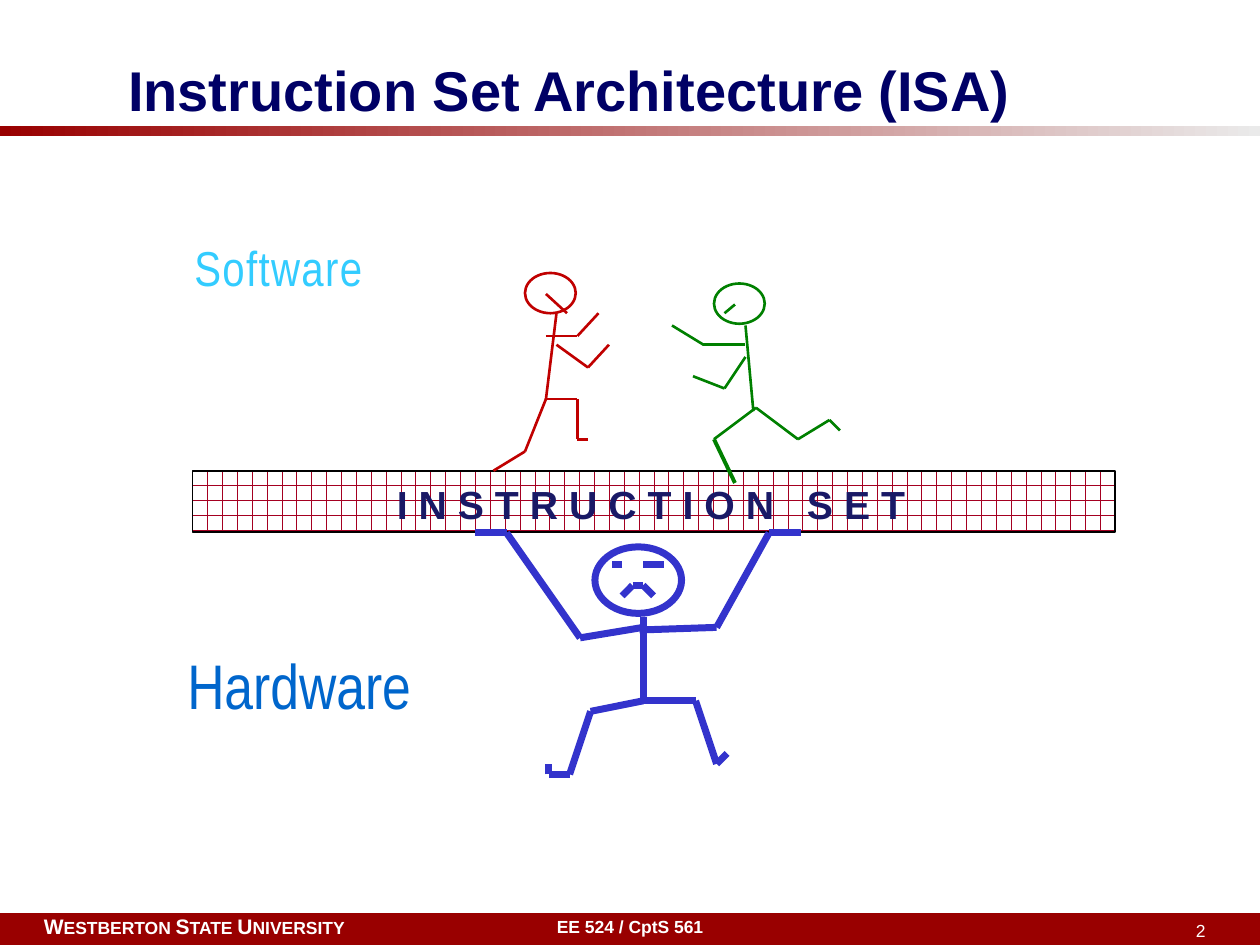
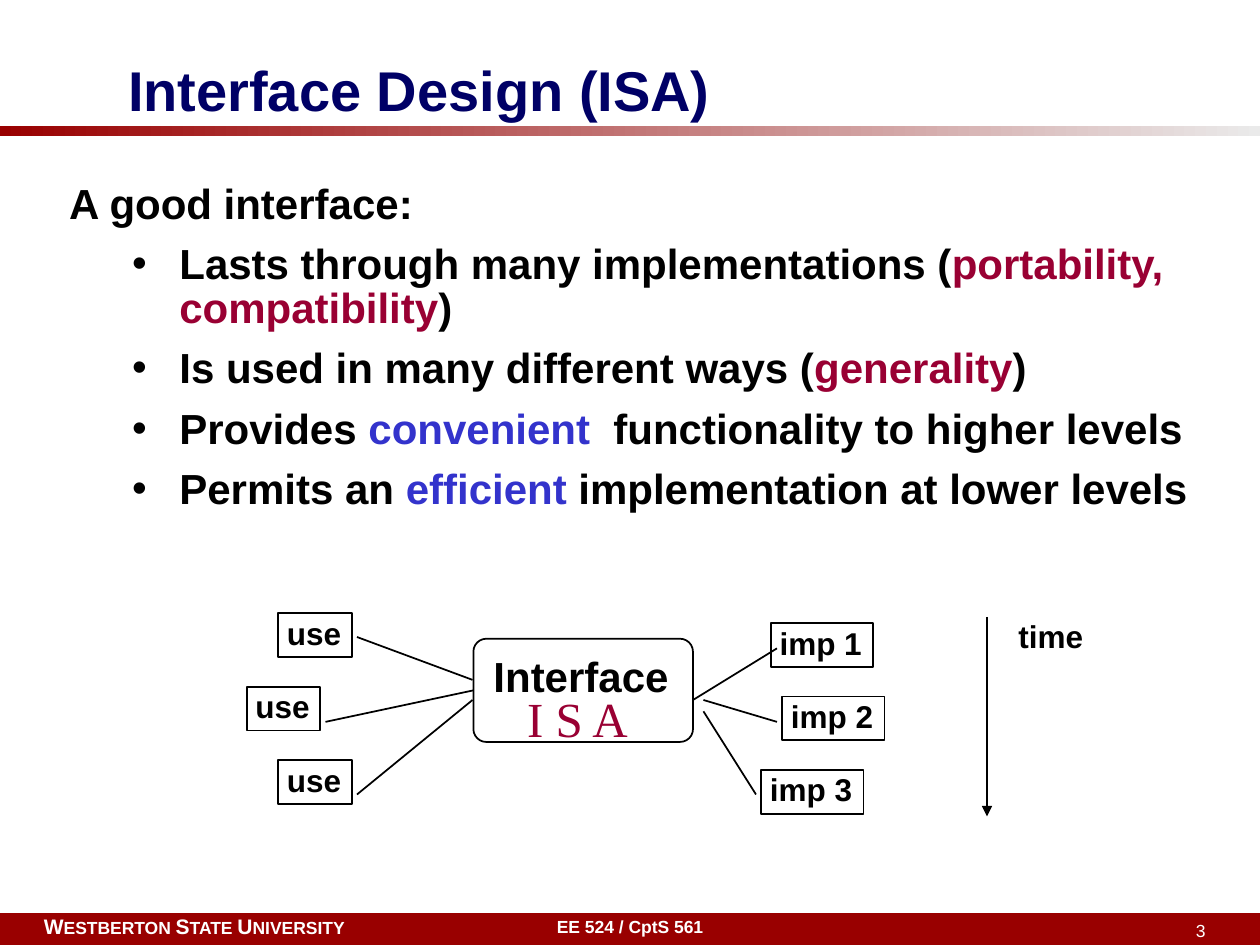
from lxml import etree
from pptx import Presentation
from pptx.dml.color import RGBColor
from pptx.enum.dml import MSO_PATTERN
from pptx.enum.shapes import MSO_CONNECTOR, MSO_SHAPE
from pptx.enum.text import MSO_ANCHOR, MSO_AUTO_SIZE, PP_ALIGN
from pptx.oxml.ns import qn
from pptx.util import Pt

STRAIGHT = MSO_CONNECTOR.STRAIGHT
RECTANGLE, ROUNDED, OVAL = MSO_SHAPE.RECTANGLE, MSO_SHAPE.ROUNDED_RECTANGLE, MSO_SHAPE.OVAL
LEFT, CENTER, RIGHT = PP_ALIGN.LEFT, PP_ALIGN.CENTER, PP_ALIGN.RIGHT
TOP, MIDDLE = MSO_ANCHOR.TOP, MSO_ANCHOR.MIDDLE
NO_AUTOFIT = MSO_AUTO_SIZE.NONE
BRICK = MSO_PATTERN.HORIZONTAL_BRICK

BLACK = RGBColor(0x00, 0x00, 0x00)
WHITE = RGBColor(0xFF, 0xFF, 0xFF)
CRIMSON = RGBColor(0x99, 0x00, 0x00)
PALE_GREY = RGBColor(0xEA, 0xEA, 0xEA)
NAVY = RGBColor(0x00, 0x00, 0x66)
DARK_NAVY = RGBColor(0x19, 0x19, 0x66)
BRICK_RED = RGBColor(0xA5, 0x00, 0x21)
MAROON = RGBColor(0x99, 0x00, 0x33)
BLUE = RGBColor(0x33, 0x33, 0xCC)
SKY = RGBColor(0x33, 0xCC, 0xFF)
OCEAN = RGBColor(0x00, 0x66, 0xCC)
RED = RGBColor(0xC0, 0x00, 0x00)
GREEN = RGBColor(0x00, 0x80, 0x00)

ARIAL, NARROW, SERIF = "Arial", "Arial Narrow", "Times New Roman"
WIDE_INSETS = (7.2, 3.6, 7.2, 3.6)
TIGHT_INSETS = (5, 2.4, 5, 2.4)

RED_HEAD = (18, 0, 29, 23)
RED_LIMBS = [
    [(36, 23), (30, 72)],
    [(30, 72), (48, 72), (48, 95), (54, 95)],
    [(30, 72), (18, 102), (0, 113)],
    [(36, 41), (54, 54), (66, 41)],
    [(30, 36), (48, 36), (60, 23)],
    [(42, 23), (30, 12)],
]
GREEN_HEAD = (24, 0, 29, 23)
GREEN_LIMBS = [
    [(42, 24), (46.5, 73)],
    [(48, 71), (24, 89)],
    [(48, 71), (72, 89), (90, 78), (96, 84)],
    [(42, 42), (30, 60), (12, 53)],
    [(42, 35), (18, 35), (0, 24)],
    [(30, 17), (36, 12)],
]
GREEN_SHIN = [(24, 89), (36, 114)]
BLUE_HEAD = (68.5, 8, 49.5, 38)
BLUE_LIMBS = [
    [(84, 36), (90, 30), (96, 30), (102, 36)],
    [(96, 18), (108, 18)],
    [(84, 18), (78, 18)],
    [(96, 48), (96, 96)],
    [(96, 96), (126, 96), (138, 132), (144, 126)],
    [(96, 96), (66, 102), (54, 138), (42, 138), (42, 132)],
    [(94, 55.5), (138, 54), (168, 0), (186, 0)],
    [(96, 54), (60, 60), (18, 0), (0, 0)],
]

INTERFACE_QUALITIES = [
    [("Lasts through many implementations (", BLACK),
     ("portability, compatibility", MAROON), (")", BLACK)],
    [("Is used in many different ways (", BLACK), ("generality", MAROON), (")", BLACK)],
    [("Provides ", BLACK), ("convenient", BLUE), ("  functionality to higher levels", BLACK)],
    [("Permits an ", BLACK), ("efficient", BLUE), (" implementation at lower levels", BLACK)],
]


def points(*lengths):
    """Turn plain numbers into point lengths."""
    return [Pt(length) for length in lengths]


def set_frame(shape, insets=WIDE_INSETS, wrap=True, anchor=TOP):
    """Set insets, wrapping and anchor, and return the first paragraph."""
    frame = shape.text_frame
    frame.auto_size = NO_AUTOFIT
    frame.word_wrap = wrap
    frame.vertical_anchor = anchor
    (frame.margin_left, frame.margin_top,
     frame.margin_right, frame.margin_bottom) = points(*insets)
    return frame.paragraphs[0]


def set_spacing(paragraph, align=LEFT, line=None, before=None):
    """Set alignment, line spacing and the percentage of space before."""
    paragraph.alignment = align
    if line:
        paragraph.line_spacing = line
    if before:
        space = etree.SubElement(paragraph._p.get_or_add_pPr(), qn("a:spcBef"))
        etree.SubElement(space, qn("a:spcPct")).set("val", str(before * 1000))


def add_run(paragraph, words, size, color, bold=True, font=ARIAL):
    """Add one formatted run."""
    run = paragraph.add_run()
    run.text = words
    run.font.name, run.font.size, run.font.bold = font, Pt(size), bold
    run.font.color.rgb = color
    return run


def add_label(slide, box, insets=WIDE_INSETS, wrap=True, **spacing):
    """Add a text box and return its paragraph."""
    paragraph = set_frame(slide.shapes.add_textbox(*points(*box)), insets, wrap)
    set_spacing(paragraph, **spacing)
    return paragraph


def add_outline(shapes, kind, box, color=BLACK, width=1):
    """Add an unfilled preset shape with a line."""
    shape = shapes.add_shape(kind, *points(*box))
    shape.shadow.inherit = False
    shape.fill.background()
    shape.line.color.rgb, shape.line.width = color, Pt(width)
    return shape


def add_line(shapes, start, end, color=BLACK, width=1):
    """Add a straight line without a shadow."""
    line = shapes.add_connector(STRAIGHT, *points(*start, *end))
    line.line.color.rgb, line.line.width = color, Pt(width)
    etree.SubElement(line._element.spPr, qn("a:effectLst"))
    return line


def add_stick_figure(slide, left, top, head, limbs, color, width):
    """Draw a head and jointed limbs as one group and return the group's shapes."""
    parts = slide.shapes.add_group_shape().shapes
    x, y, head_width, head_height = head
    add_outline(parts, OVAL, (left + x, top + y, head_width, head_height), color, width)
    for limb in limbs:
        joints = [(left + x, top + y) for x, y in limb]
        for start, end in zip(joints, joints[1:]):
            add_line(parts, start, end, color, width)
    return parts


def add_title(slide, words):
    """Fill the title placeholder and draw the fading rule below it."""
    title = slide.shapes.title
    title.left, title.top, title.width, title.height = points(66, 36, 594, 30)
    paragraph = set_frame(title, anchor=MIDDLE)
    set_spacing(paragraph)
    add_run(paragraph, words, 32, NAVY)
    rule = add_outline(slide.shapes, RECTANGLE, (0, 72, 720, 6))
    rule.line.fill.background()
    rule.fill.gradient()
    rule.fill.gradient_angle = 0
    for stop, color in zip(rule.fill.gradient_stops, (CRIMSON, PALE_GREY)):
        stop.color.rgb = color


def add_footer(slide, top, number):
    """Draw the footer band with school, course and slide number."""
    band = add_outline(slide.shapes, RECTANGLE, (0, top, 720, 18), CRIMSON, 0.75)
    band.fill.solid()
    band.fill.fore_color.rgb = CRIMSON
    school = add_label(slide, (18, top - 3.6, 216, 21.6), before=50)
    for word in ("WESTBERTON ", "STATE ", "UNIVERSITY"):
        add_run(school, word[0], 12, WHITE)
        add_run(school, word[1:], 10, WHITE)
    course = add_label(slide, (246, top - 6, 228, 24), (7.2, 7.2, 7.2, 3.6), align=CENTER)
    add_run(course, "EE 524 / CptS 561", 10, WHITE)
    page = add_label(slide, (546, top, 150, 18), align=RIGHT)
    add_run(page, str(number), 10, WHITE, False)


def add_instruction_set_beam(slide, left, top):
    """Draw the brick beam with its spaced small-caps label."""
    beam = add_outline(slide.shapes, RECTANGLE, (left, top, 527, 35))
    beam.fill.patterned()
    beam.fill.pattern = BRICK
    beam.fill.fore_color.rgb, beam.fill.back_color.rgb = BRICK_RED, WHITE
    label = add_label(slide, (left + 4, top + 0.5, 516, 35), TIGHT_INSETS,
                      align=CENTER, line=0.92)
    run = add_run(label, " ".join("instruction set"), 28, DARK_NAVY)
    run.font._element.set("cap", "small")


def add_layer_names(slide, left, top):
    """Name the software layer above the beam and the hardware layer below it."""
    software = add_label(slide, (left + 6, top, 174, 108), wrap=False, align=CENTER)
    run = add_run(software, " ".join("Software"), 28, SKY, False, NARROW)
    run.font._element.set("spc", "-280")
    hardware = add_label(slide, (left, top + 234, 210, 84), wrap=False, align=CENTER)
    add_run(hardware, "Hardware", 36, OCEAN, False, NARROW)


def build_architecture_slide(slide):
    """Show hardware carrying the instruction set on which software runs."""
    add_title(slide, "Instruction Set Architecture (ISA)")
    add_instruction_set_beam(slide, 110, 269)
    runner = add_stick_figure(slide, 384, 162, GREEN_HEAD, GREEN_LIMBS, GREEN, 1.5)
    shin = [(384 + x, 162 + y) for x, y in GREEN_SHIN]
    add_line(runner, *shin, GREEN, 2.25)
    add_stick_figure(slide, 271.5, 304.5, BLUE_HEAD, BLUE_LIMBS, BLUE, 4)
    add_layer_names(slide, 66, 132)
    add_stick_figure(slide, 282, 156, RED_HEAD, RED_LIMBS, RED, 1.5)
    add_footer(slide, 522, 2)


def add_qualities(slide, box):
    """Fill the body placeholder with the qualities of a good interface."""
    body = slide.placeholders[1]
    body.left, body.top, body.width, body.height = points(*box)
    heading = set_frame(body, TIGHT_INSETS)
    paragraphs = [heading] + [body.text_frame.add_paragraph() for _ in INTERFACE_QUALITIES]
    texts = [[("A good interface:", BLACK)]] + INTERFACE_QUALITIES
    for paragraph, runs in zip(paragraphs, texts):
        is_heading = paragraph is heading
        paragraph.level = 0 if is_heading else 1
        set_spacing(paragraph, line=0.86, before=41)
        properties = paragraph._p.get_or_add_pPr()
        properties.set("marL", str(Pt(27 if is_heading else 63)))
        properties.set("indent", str(Pt(-27)))
        if is_heading:
            etree.SubElement(properties, qn("a:buNone"))
        else:
            etree.SubElement(properties, qn("a:buFont")).set("typeface", ARIAL)
            etree.SubElement(properties, qn("a:buChar")).set("char", "•")
        for words, color in runs:
            add_run(paragraph, words, 24, color)


def add_boxes(slide, top, width, names, lefts):
    """Stack captioned boxes at an equal pitch."""
    for row, (name, left) in enumerate(zip(names, lefts)):
        box = add_outline(slide.shapes, RECTANGLE, (left, top + 42 * row, width, 25))
        paragraph = set_frame(box, TIGHT_INSETS, False)
        set_spacing(paragraph, line=0.92)
        add_run(paragraph, name, 18, BLACK)


def add_interface_diagram(slide, left, top):
    """Link the uses to the interface and the interface to its implementations."""
    interface = add_label(slide, (left + 136, top + 23, 110, 29), TIGHT_INSETS, False, line=0.87)
    add_run(interface, "Interface", 24, BLACK)
    hub = add_outline(slide.shapes, ROUNDED, (left + 129.5, top + 14.5, 125.5, 59))
    hub.adjustments[0] = 0.125
    add_boxes(slide, top + 5.5, 58.5, ["imp 1", "imp 2", "imp 3"],
              [left + x for x in (299.5, 306, 294)])
    add_boxes(slide, top, 42, ["use"] * 3, [left + x for x in (18, 0, 18)])
    links = [
        ((255, 49.5), (303, 20)), ((261, 49.5), (303, 62)), ((261, 56), (291, 103.5)),
        ((63, 13.5), (129, 38)), ((45, 62), (129, 44)), ((63, 103.5), (129, 49.5)),
    ]
    lines = [add_line(slide.shapes, (left + x1, top + y1), (left + x2, top + y2))
             for (x1, y1), (x2, y2) in links]
    lines[4].end_connect(hub, 1)
    isa = add_label(slide, (left + 141, top + 39.5, 96, 41), align=CENTER, before=50)
    add_run(isa, "I S A", 28, MAROON, False, SERIF)


def add_time_arrow(slide, left, top):
    """Draw the downward time arrow and its label."""
    arrow = add_line(slide.shapes, (left, top), (left, top + 114))
    etree.SubElement(arrow.line._get_or_add_ln(), qn("a:tailEnd")).set("type", "triangle")
    time = add_label(slide, (left + 13, top + 1, 47, 22), TIGHT_INSETS, False, line=0.85)
    add_run(time, "time", 18, BLACK)


def build_interface_slide(slide):
    """List the qualities of an interface above its diagram."""
    add_title(slide, "Interface Design (ISA)")
    add_qualities(slide, (34.5, 103, 677, 199.5))
    add_interface_diagram(slide, 141, 350.5)
    add_time_arrow(slide, 564, 352.5)
    add_footer(slide, 522, 3)


def main():
    """Build and save the deck."""
    deck = Presentation()
    deck.slide_width, deck.slide_height = points(720, 540)
    build_architecture_slide(deck.slides.add_slide(deck.slide_layouts[5]))
    build_interface_slide(deck.slides.add_slide(deck.slide_layouts[1]))
    deck.save("out.pptx")


if __name__ == "__main__":
    main()
